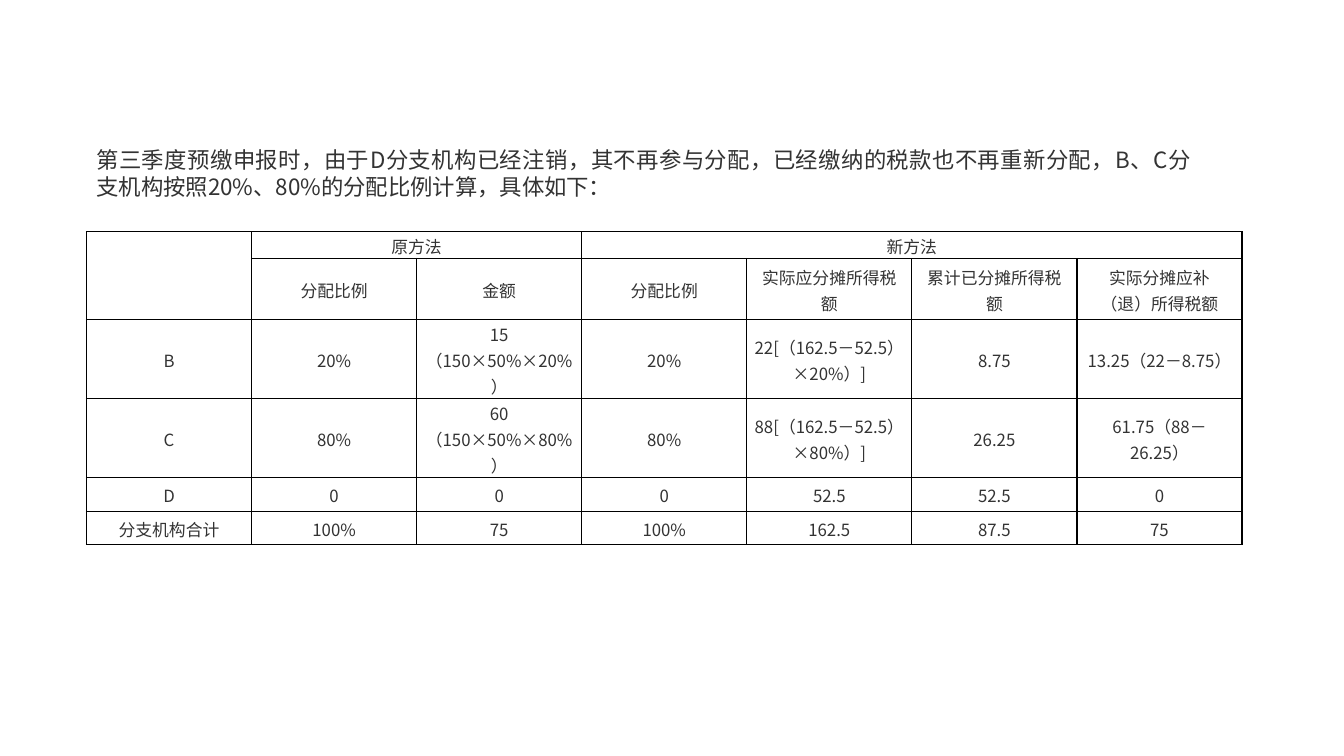
from dataclasses import dataclass

import lxml.etree
import pptx
import pptx.dml.color
import pptx.enum.text
import pptx.oxml.ns
import pptx.util

Cm, Pt = pptx.util.Cm, pptx.util.Pt
Align = pptx.enum.text.PP_ALIGN
qn = pptx.oxml.ns.qn

FONT = "Noto Sans CJK SC"
INK = "333333"
RULE = "000000"
LINE_SPACING = Pt(18.8)
COLUMN_WIDTH = Cm(4.16)

INTRO = ("第三季度预缴申报时，由于D分支机构已经注销，其不再参与分配，已经缴纳的税款也不再重新分配，"
         "B、C分支机构按照20%、80%的分配比例计算，具体如下：")


@dataclass
class Row:
    height: float  # centimetres
    texts: tuple[str, ...]


@dataclass
class Span:
    first: tuple[int, int]
    last: tuple[int, int]


ROWS = [
    Row(0.67, ("", "原方法", "", "新方法", "", "", "")),
    Row(1.55, ("", "分配比例", "金额", "分配比例", "实际应分摊所得税额",
               "累计已分摊所得税额", "实际分摊应补（退）所得税额")),
    Row(1.99, ("B", "20%", "15（150×50%×20%）", "20%",
               "22[（162.5－52.5）×20%）]", "8.75", "13.25（22－8.75）")),
    Row(1.99, ("C", "80%", "60（150×50%×80%）", "80%",
               "88[（162.5－52.5）×80%）]", "26.25", "61.75（88－26.25）")),
    Row(0.84, ("D", "0", "0", "0", "52.5", "52.5", "0")),
    Row(0.84, ("分支机构合计", "100%", "75", "100%", "162.5", "87.5", "75")),
]
SPANS = [Span((0, 0), (1, 0)), Span((0, 1), (0, 2)), Span((0, 3), (0, 6))]

INTRO_FORMAT = {"alignment": Align.JUSTIFY, "line_spacing": LINE_SPACING, "space_before": Pt(15)}
ENTRY_FORMAT = {"alignment": Align.CENTER, "line_spacing": LINE_SPACING}
CELL_FORMAT = {
    "margin_left": Cm(0.18), "margin_right": Cm(0.18), "margin_top": 0, "margin_bottom": 0,
    "vertical_anchor": pptx.enum.text.MSO_ANCHOR.MIDDLE,
}


def apply_format(target, values: dict) -> None:
    for name, value in values.items():
        setattr(target, name, value)


def colour(hex_code: str) -> pptx.dml.color.RGBColor:
    return pptx.dml.color.RGBColor.from_string(hex_code)


def write(paragraph, text: str, size: float, layout: dict) -> None:
    apply_format(paragraph, layout)
    if not text:
        return
    run = paragraph.add_run()
    run.text = text
    apply_format(run.font, {"size": Pt(size), "name": FONT})
    run.font.color.rgb = colour(INK)
    east_asian = lxml.etree.SubElement(run.font._element, qn("a:ea"))
    east_asian.set("typeface", FONT)


def rule_cell(cell) -> None:
    properties = cell._tc.get_or_add_tcPr()
    for position, side in enumerate(("lnL", "lnR", "lnT", "lnB")):
        border = lxml.etree.Element(qn(f"a:{side}"), w=str(Pt(1)))
        fill = lxml.etree.SubElement(border, qn("a:solidFill"))
        lxml.etree.SubElement(fill, qn("a:srgbClr"), val=RULE)
        properties.insert(position, border)


def add_intro(slide) -> None:
    frame = slide.shapes.add_textbox(Cm(2.18), Cm(3.58), Cm(28.07), Cm(1.6)).text_frame
    apply_format(frame, {"word_wrap": True,
                         "auto_size": pptx.enum.text.MSO_AUTO_SIZE.SHAPE_TO_FIT_TEXT})
    write(frame.paragraphs[0], INTRO, 16, INTRO_FORMAT)


def add_allocation_table(slide) -> None:
    column_count = len(ROWS[0].texts)
    height = Cm(sum(row.height for row in ROWS))
    table = slide.shapes.add_table(len(ROWS), column_count, Cm(2.18), Cm(5.84),
                                   COLUMN_WIDTH * column_count, height).table
    apply_format(table, {"first_row": False, "horz_banding": False})
    for column in table.columns:
        column.width = COLUMN_WIDTH

    for row_index, row in enumerate(ROWS):
        table.rows[row_index].height = Cm(row.height)
        for column_index, text in enumerate(row.texts):
            cell = table.cell(row_index, column_index)
            apply_format(cell, CELL_FORMAT)
            cell.fill.background()
            rule_cell(cell)
            write(cell.text_frame.paragraphs[0], text, 12, ENTRY_FORMAT)

    for span in SPANS:
        table.cell(*span.first).merge(table.cell(*span.last))


def main() -> None:
    presentation = pptx.Presentation()
    apply_format(presentation, {"slide_width": Cm(33.87), "slide_height": Cm(19.05)})
    slide = presentation.slides.add_slide(presentation.slide_layouts[6])
    # Introductory sentence
    add_intro(slide)
    # Comparison of the two allocation methods
    add_allocation_table(slide)
    presentation.save("out.pptx")


if __name__ == "__main__":
    main()
